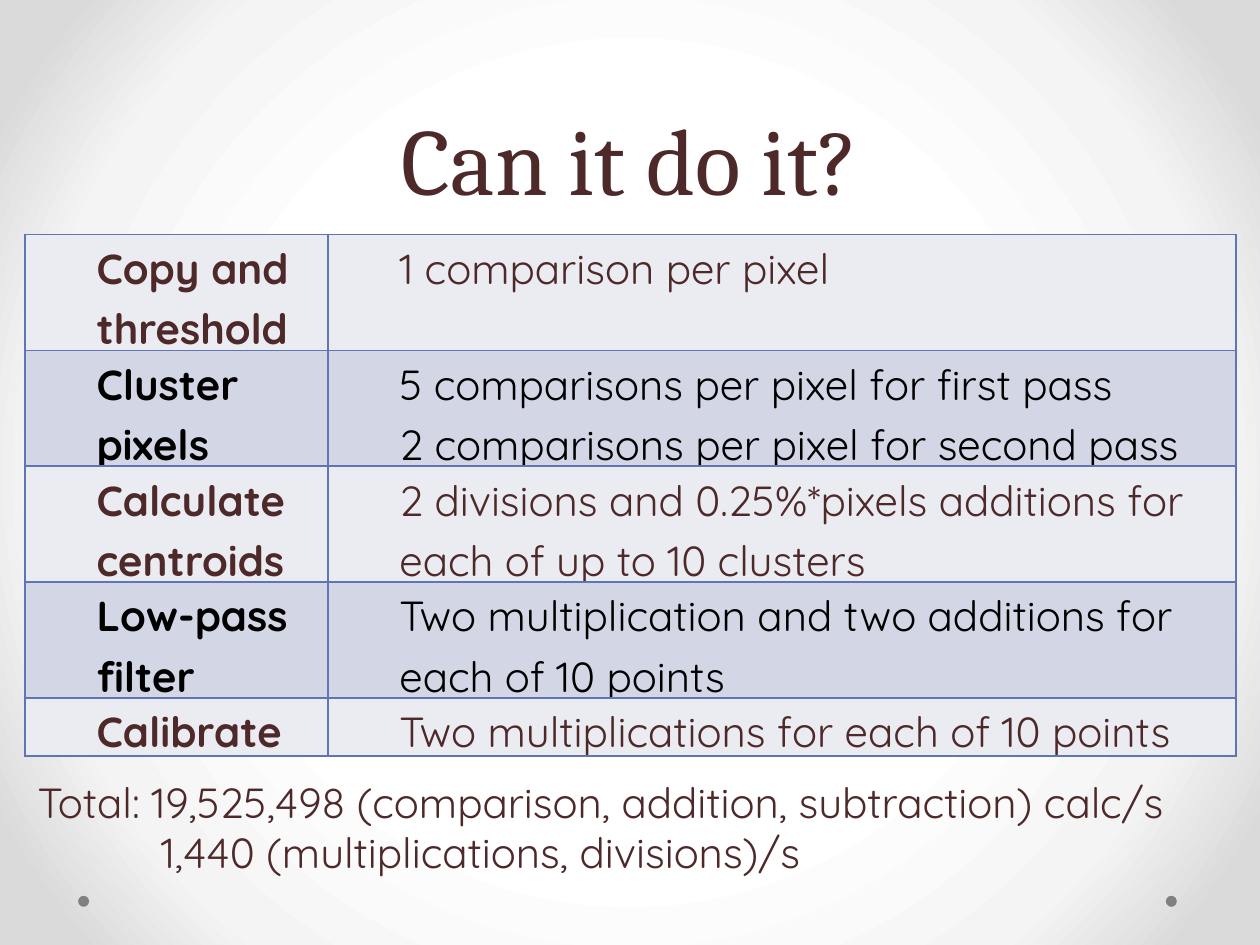
import dataclasses

import pptx
import pptx.dml.color
import pptx.enum.shapes
import pptx.enum.text
import pptx.oxml
import pptx.oxml.ns
import pptx.util

SLIDE_WIDTH = pptx.util.Inches(10)
SLIDE_HEIGHT = pptx.util.Inches(7.5)


@dataclasses.dataclass(frozen=True)
class Theme:
    heading_font: str = "Cambria"
    body_font: str = "Quicksand"
    heading_size: int = 54
    body_size: int = 24
    heading_leading: int = 58
    row_leading: float = 1.15
    ink: str = "4E2929"
    black: str = "000000"
    light_band: str = "EAECF2"
    dark_band: str = "D2D6E5"
    rule: str = "6076B4"
    dot: str = "808080"
    glow: tuple = ((50, "FFFFFF"), (76, "F4F4F4"), (92, "DADADA"))


@dataclasses.dataclass(frozen=True)
class Box:
    left: int
    top: int
    width: int
    height: int

    def region(self, left, top, width, height):
        return Box(
            self.left + round(self.width * left),
            self.top + round(self.height * top),
            round(self.width * width),
            round(self.height * height),
        )

    def bounds(self):
        return self.left, self.top, self.width, self.height


THEME = Theme()
OPERATIONS = (
    ("Copy and threshold", ("1 comparison per pixel",)),
    ("Cluster pixels", ("5 comparisons per pixel for first pass",
                        "2 comparisons per pixel for second pass")),
    ("Calculate centroids",
     ("2 divisions and 0.25%*pixels additions for each of up to 10 clusters",)),
    ("Low-pass filter",
     ("Two multiplication and two additions for each of 10 points",)),
    ("Calibrate", ("Two multiplications for each of 10 points",)),
)
TOTALS = (
    ("Total: 19,525,498 (comparison, addition, subtraction) calc/s", 0),
    ("1,440 (multiplications, divisions)/s", 0.1),
)


def rgb(color):
    return pptx.dml.color.RGBColor.from_string(color)


def add_run(paragraph, wording, font, size, color, bold=False):
    run = paragraph.add_run()
    run.text = wording
    run.font.name = font
    run.font.size = pptx.util.Pt(size)
    run.font.color.rgb = rgb(color)
    run.font.bold = bold


def paragraph_at(frame, index):
    return frame.paragraphs[0] if index == 0 else frame.add_paragraph()


def indent(paragraph, distance):
    properties = paragraph._p.get_or_add_pPr()
    properties.set("marL", str(round(distance)))
    properties.set("indent", "0")


def drawing_xml(markup):
    return pptx.oxml.parse_xml(
        markup.replace(">", " " + pptx.oxml.ns.nsdecls("a") + ">", 1))


def draw_background(slide, theme):
    slide.background.fill.gradient()
    gradient = slide.element.find(".//" + pptx.oxml.ns.qn("a:gradFill"))
    stops = "".join(
        f'<a:gs pos="{share * 1000}"><a:srgbClr val="{color}"/></a:gs>'
        for share, color in theme.glow)
    glow = drawing_xml(
        f'<a:gradFill rotWithShape="1"><a:gsLst>{stops}</a:gsLst>'
        '<a:path path="circle"><a:fillToRect l="50000" t="50000" '
        'r="50000" b="50000"/></a:path></a:gradFill>')
    gradient.getparent().replace(gradient, glow)


def draw_dots(slide, box, theme):
    diameter = round(box.width * 0.01)
    for left in (box.left + box.width - diameter, box.left):
        dot = slide.shapes.add_shape(
            pptx.enum.shapes.MSO_SHAPE.OVAL, left, box.top, diameter, diameter)
        dot.shadow.inherit = False
        dot.fill.solid()
        dot.fill.fore_color.rgb = rgb(theme.dot)
        dot.line.fill.background()


def draw_heading(slide, box, theme):
    frame = slide.shapes.add_textbox(*box.bounds()).text_frame
    frame.word_wrap = True
    frame.vertical_anchor = pptx.enum.text.MSO_ANCHOR.BOTTOM
    paragraph = frame.paragraphs[0]
    paragraph.alignment = pptx.enum.text.PP_ALIGN.CENTER
    paragraph.line_spacing = pptx.util.Pt(theme.heading_leading)
    add_run(paragraph, "Can it do it?", theme.heading_font,
            theme.heading_size, theme.ink)


def border_cell(cell, theme):
    properties = cell._tc.get_or_add_tcPr()
    for position, side in enumerate(("lnL", "lnR", "lnT", "lnB")):
        properties.insert(position, drawing_xml(
            f'<a:{side} w="{int(pptx.util.Pt(1))}"><a:solidFill>'
            f'<a:srgbClr val="{theme.rule}"/></a:solidFill></a:{side}>'))


def fill_cell(cell, lines, band, ink, bold, box, theme):
    cell.margin_left = cell.margin_right = round(box.width * 0.007)
    cell.margin_top = cell.margin_bottom = 0
    cell.fill.solid()
    cell.fill.fore_color.rgb = rgb(band)
    border_cell(cell, theme)
    for index, line in enumerate(lines):
        paragraph = paragraph_at(cell.text_frame, index)
        paragraph.line_spacing = theme.row_leading
        indent(paragraph, box.width * 0.052)
        add_run(paragraph, line, theme.body_font, theme.body_size, ink, bold)


def draw_operations(slide, box, theme):
    table = slide.shapes.add_table(len(OPERATIONS), 2, *box.bounds()).table
    table.first_row = table.horz_banding = False
    for column, share in zip(table.columns, (0.25, 0.75)):
        column.width = round(box.width * share)
    row_units = (2, 2, 2, 2, 1)
    for row, units in zip(table.rows, row_units):
        row.height = round(box.height * units / sum(row_units))
    looks = ((theme.light_band, theme.ink), (theme.dark_band, theme.black))
    for index, (operation, costs) in enumerate(OPERATIONS):
        band, ink = looks[index % 2]
        fill_cell(table.cell(index, 0), (operation,), band, ink, True, box, theme)
        fill_cell(table.cell(index, 1), costs, band, ink, False, box, theme)


def draw_totals(slide, box, theme):
    frame = slide.shapes.add_textbox(*box.bounds()).text_frame
    frame.word_wrap = True
    for index, (total, share) in enumerate(TOTALS):
        paragraph = paragraph_at(frame, index)
        indent(paragraph, box.width * share)
        add_run(paragraph, total, theme.body_font, theme.body_size, theme.ink)


def main():
    presentation = pptx.Presentation()
    presentation.slide_width = SLIDE_WIDTH
    presentation.slide_height = SLIDE_HEIGHT
    slide = presentation.slides.add_slide(presentation.slide_layouts[6])
    page = Box(0, 0, SLIDE_WIDTH, SLIDE_HEIGHT)
    draw_background(slide, THEME)
    draw_dots(slide, page.region(0.062, 0.948, 0.872, 0.012), THEME)
    draw_heading(slide, page.region(0.05, 0, 0.9, 0.233), THEME)
    draw_operations(slide, page.region(0.02, 0.248, 0.961, 0.39), THEME)
    draw_totals(slide, page.region(0.02, 0.815, 0.979, 0.121), THEME)
    presentation.save("out.pptx")


if __name__ == "__main__":
    main()
